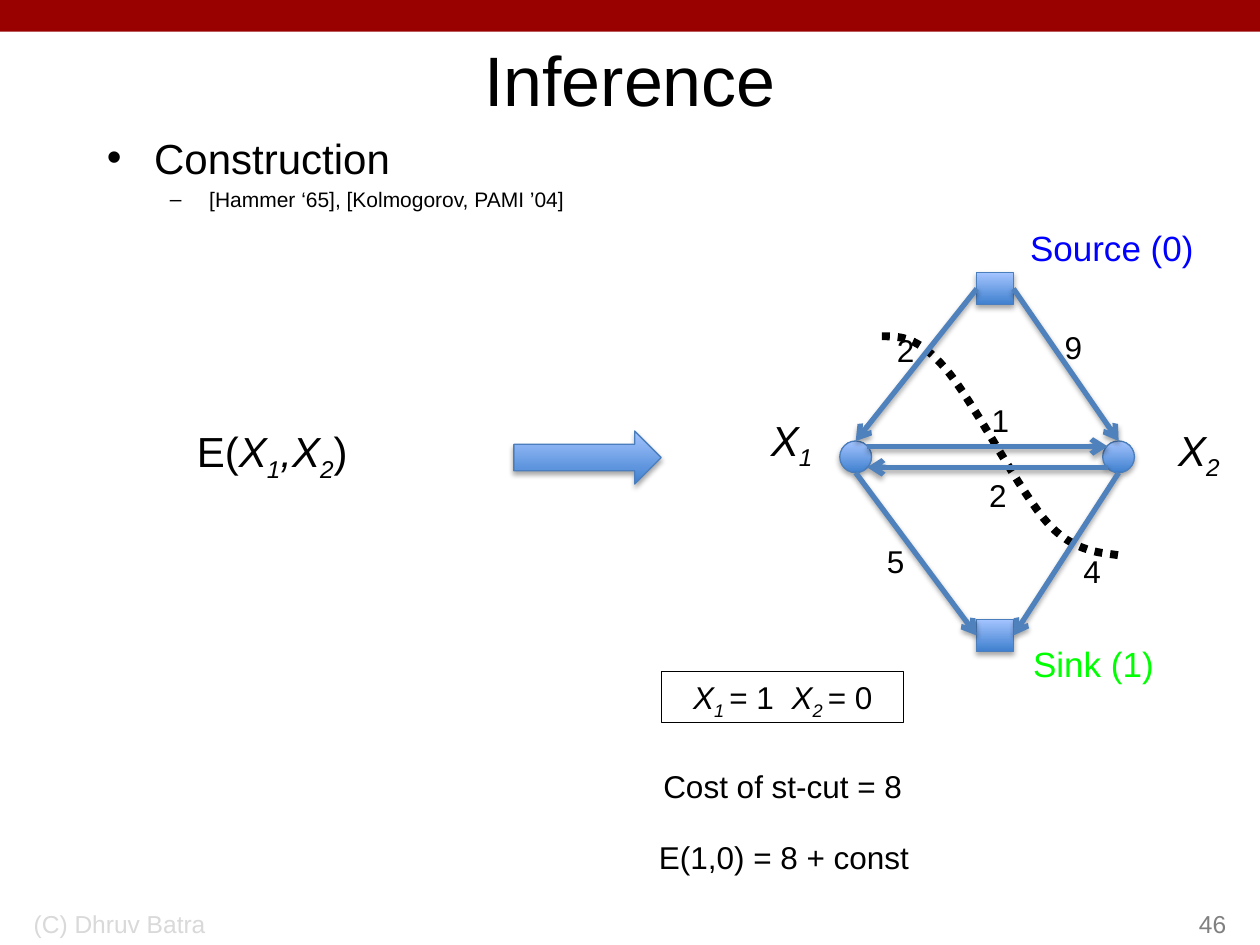
from pptx import Presentation
from pptx.dml.color import RGBColor
from pptx.enum.dml import MSO_LINE
from pptx.enum.shapes import MSO_CONNECTOR, MSO_SHAPE
from pptx.enum.text import MSO_ANCHOR, PP_ALIGN
from pptx.oxml import parse_xml
from pptx.oxml.ns import nsdecls
from pptx.util import Cm, Pt

LEFT, CENTER, RIGHT = PP_ALIGN.LEFT, PP_ALIGN.CENTER, PP_ALIGN.RIGHT
BOTTOM = MSO_ANCHOR.BOTTOM
RECT, OVAL, ARROW = MSO_SHAPE.RECTANGLE, MSO_SHAPE.OVAL, MSO_SHAPE.RIGHT_ARROW
STRAIGHT = MSO_CONNECTOR.STRAIGHT
DOTTED = MSO_LINE.ROUND_DOT
rgb = RGBColor.from_string
SHADOW = (
    f'<a:effectLst {nsdecls("a")}><a:outerShdw blurRad="39370" dist="22860" dir="5400000" '
    'rotWithShape="0"><a:srgbClr val="000000"><a:alpha val="35000"/></a:srgbClr>'
    "</a:outerShdw></a:effectLst>"
)
TAIL = f'<a:tailEnd {nsdecls("a")} type="arrow"/>'

prs = Presentation()
prs.slide_width, prs.slide_height = Cm(25.4), Cm(19.05)
s = prs.slides.add_slide(prs.slide_layouts[1])


def add_text(x, y, w, h, runs, size, color="000000", align=CENTER):
    tb = s.shapes.add_textbox(Cm(x), Cm(y), Cm(w), Cm(h))
    tf = tb.text_frame
    tf.word_wrap = align != CENTER
    p = tf.paragraphs[0]
    p.alignment = align
    p.font.name, p.font.size = "Arial", Pt(size)
    p.font.color.rgb = rgb(color)
    for text, style in runs:
        r = p.add_run()
        r.text = text
        if style:
            r.font.italic = True
        if style == "sub":
            r.font._element.set("baseline", "-25000")
    return tb


def add_solid(kind, x, y, w, h):
    sp = s.shapes.add_shape(kind, Cm(x), Cm(y), Cm(w), Cm(h))
    sp.fill.gradient()
    sp.fill.gradient_angle = 90
    for stop, color in zip(sp.fill.gradient_stops, ("3F80CE", "A4C4FF")):
        stop.color.rgb = rgb(color)
    sp.line.color.rgb = rgb("4B7EBC")
    sp.line.width = Pt(0.75)
    sp._element.spPr.append(parse_xml(SHADOW))
    return sp


bar = s.shapes.add_shape(RECT, 0, 0, prs.slide_width, Cm(0.64))
bar.shadow.inherit = False
bar.fill.solid()
bar.fill.fore_color.rgb = rgb("990000")
bar.line.fill.background()

title, body = s.shapes.title, s.placeholders[1]
for ph, y, h in ((title, 0.64, 1.9), (body, 2.54, 15.24)):
    ph.left, ph.top, ph.width, ph.height = Cm(1.9), Cm(y), Cm(21.6), Cm(h)
title.text_frame.text = "Inference"
body.text_frame.text = "Construction\n[Hammer ‘65], [Kolmogorov, PAMI ’04]"
heading, citation = body.text_frame.paragraphs
heading.space_before = Pt(0)
citation.level = 1
for p, size in ((title.text_frame.paragraphs[0], 40), (heading, 24), (citation, 12)):
    p.font.name, p.font.size = "Arial", Pt(size)
    p.font.color.rgb = rgb("000000")

for x, w, text, color, align in (
    (0.43, 8.05, "(C) Dhruv Batra", "D9D9D9", LEFT),
    (19.69, 5.28, "46", "808080", RIGHT),
):
    tb = add_text(x, 17.78, w, 1.27, [(text, "")], 14, color, align)
    tb.text_frame.vertical_anchor = BOTTOM

x1 = [("X", "i"), ("1", "sub")]
x2 = [("X", "i"), ("2", "sub")]
add_text(3.66, 8.46, 3.66, 1.27, [("E(", ""), *x1, (",", "i"), *x2, (")", "")], 24)
add_solid(ARROW, 10.36, 8.69, 2.97, 1.07)

labelling = [("X", "i"), ("1 ", "sub"), ("= 1  ", ""), ("X", "i"), ("2 ", "sub"), ("= 0", "")]
tb = add_text(13.34, 13.54, 4.88, 1.02, labelling, 18)
tb.line.color.rgb = rgb("000000")
tb.line.width = Pt(0.75)
add_text(12.07, 15.34, 7.42, 0.94, [("Cost of st-cut = 8", "")], 18)
add_text(13, 16.76, 5.61, 1.02, [("E(1,0) = 8 + const", "")], 18)

start = (17.78, 6.78)
curves = [
    [(18.14, 6.78), (18.5, 6.78), (19.05, 7.42)],
    [(19.61, 8.05), (20.57, 9.96), (21.16, 10.59)],
    [(21.77, 11.23), (22.4, 11.13), (22.66, 11.22)],
]
points, a, steps = [], start, 16
for b, c, d in curves:
    for t in (i / steps for i in range(1, steps + 1)):
        weights = ((1 - t) ** 3, 3 * t * (1 - t) ** 2, 3 * t**2 * (1 - t), t**3)
        points.append([Cm(sum(k * q[axis] for k, q in zip(weights, (a, b, c, d)))) for axis in (0, 1)])
    a = d
fb = s.shapes.build_freeform(Cm(start[0]), Cm(start[1]))
fb.add_line_segments(points, close=False)
cut = fb.convert_to_shape()
cut.shadow.inherit = False
cut.fill.background()
cut.line.color.rgb = rgb("000000")
cut.line.width = Pt(4.5)
cut.line.dash_style = DOTTED

for x, y, cost in (
    (17.83, 6.55, "2"), (21.21, 6.48, "9"), (17.63, 10.8, "5"),
    (21.59, 11, "4"), (19.69, 9.47, "2"), (19.74, 7.95, "1"),
):
    add_text(x, y, 0.79, 0.94, [(cost, "")], 18)
add_text(20.42, 4.45, 3.99, 1.09, [("Source (0)", "")], 20, "0000FF")
add_text(20.57, 12.83, 2.95, 1.09, [("Sink (1)", "")], 20, "00FF00")
add_text(15.16, 8.23, 1.6, 1.27, x1, 24)
add_text(23.37, 8.43, 1.6, 1.27, x2, 24)

source, sink = [add_solid(RECT, 19.69, y, 0.74, 0.64) for y in (5.5, 12.49)]
node1, node2 = [add_solid(OVAL, x, 8.89, 0.64, 0.64) for x in (16.93, 22.23)]

for x_from, y_from, x_to, y_to, begin, end in (
    (19.69, 5.82, 17.25, 8.89, (source, 1), (node1, 0)),
    (20.43, 5.82, 22.55, 8.89, (source, 3), (node2, 0)),
    (17.25, 9.53, 19.69, 12.81, None, (sink, 1)),
    (22.55, 9.53, 20.43, 12.81, None, (sink, 3)),
    (17.48, 9, 22.33, 9, None, None),
    (22.33, 9.42, 17.48, 9.42, None, None),
):
    edge = s.shapes.add_connector(STRAIGHT, Cm(x_from), Cm(y_from), Cm(x_to), Cm(y_to))
    if begin:
        edge.begin_connect(*begin)
    if end:
        edge.end_connect(*end)
    edge.line.color.rgb = rgb("4F81BD")
    edge.line.width = Pt(3)
    edge.line._get_or_add_ln().append(parse_xml(TAIL))
    edge._element.spPr.append(parse_xml(SHADOW))

prs.save("out.pptx")
